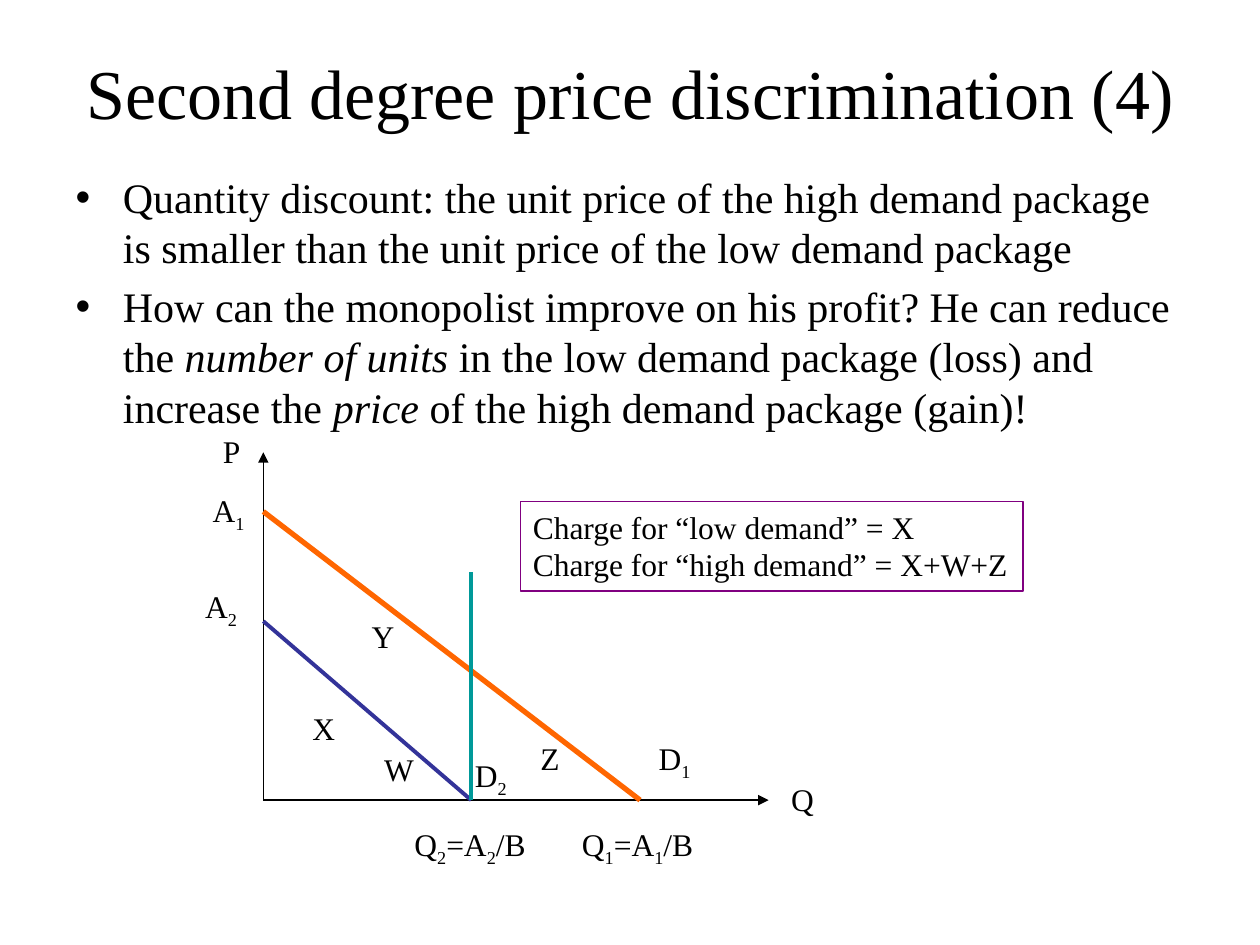
from dataclasses import dataclass

from lxml.etree import SubElement
from pptx import Presentation
from pptx.dml.color import RGBColor
from pptx.enum.shapes import MSO_CONNECTOR as Connector, MSO_SHAPE as Shape
from pptx.enum.text import MSO_ANCHOR as Anchor, MSO_AUTO_SIZE as AutoSize, PP_ALIGN as Align
from pptx.oxml.ns import qn
from pptx.util import Inches, Pt


@dataclass(frozen=True)
class Theme:
    font: str = "Times New Roman"
    title_size: int = 40
    body_size: int = 24
    label_size: int = 18
    text: str = "000000"
    high_demand: str = "FF6600"
    low_demand: str = "333399"
    quantity_limit: str = "009999"
    box_line: str = "800080"


@dataclass(frozen=True)
class Label:
    """Diagram text; an underscore lowers the character after it."""
    text: str
    column: float
    row: float
    width: float


@dataclass(frozen=True)
class Line:
    start: tuple[float, float]
    end: tuple[float, float]
    color: str
    weight: float
    arrow: bool = False


THEME = Theme()
COLUMNS, ROWS = 100, 75
SLIDE_WIDTH, SLIDE_HEIGHT = Inches(10), Inches(7.5)
LABEL_HEIGHT = 4

AXIS_X, AXIS_Y = 20.9, 63.5
LOW_QUANTITY, HIGH_QUANTITY = 37.4, 50.8
ORIGIN = (AXIS_X, AXIS_Y)

LINES = [
    Line(ORIGIN, (AXIS_X, 35.9), THEME.text, 0.75, arrow=True),
    Line(ORIGIN, (61, AXIS_Y), THEME.text, 0.75, arrow=True),
    Line((AXIS_X, 40.6), (HIGH_QUANTITY, AXIS_Y), THEME.high_demand, 3),
    Line((AXIS_X, 49.3), (LOW_QUANTITY, AXIS_Y), THEME.low_demand, 2.25),
    Line((LOW_QUANTITY, AXIS_Y), (LOW_QUANTITY, 45.4), THEME.quantity_limit, 2.25),
]

LABELS = [
    Label("P", 16.7, 33.8, 3.4),
    Label("Q", 61.8, 61.4, 3.8),
    Label("A_1", 15.9, 38.5, 4.7),
    Label("A_2", 15.3, 46.1, 4.7),
    Label("D_1", 51.3, 58.2, 4.7),
    Label("D_2", 36.7, 59.5, 4.7),
    Label("Q_1=A_1/B", 45.2, 65, 11.1),
    Label("Q_2=A_2/B", 31.9, 65, 11.1),
    Label("X", 23.8, 55.8, 3.8),
    Label("Y", 28.5, 48.5, 3.8),
    Label("Z", 41.9, 58.2, 3.5),
    Label("W", 29.5, 59, 4.4),
]

# Each bullet is a list of (text, italic) runs.
BULLETS = [
    [("Quantity discount: the unit price of the high demand package "
      "is smaller than the unit price of the low demand package", False)],
    [("How can the monopolist improve on his profit? He can reduce the ", False),
     ("number of units", True),
     (" in the low demand package (loss) and increase the ", False),
     ("price", True),
     (" of the high demand package (gain)!", False)],
]
CHARGES = "Charge for “low demand” = X\nCharge for “high demand” = X+W+Z"


def x(column: float) -> int:
    return round(SLIDE_WIDTH * column / COLUMNS)


def y(row: float) -> int:
    return round(SLIDE_HEIGHT * row / ROWS)


def area(column: float, row: float, width: float, height: float) -> tuple[int, int, int, int]:
    return x(column), y(row), x(width), y(height)


def format_runs(text_frame, size: int) -> None:
    for paragraph in text_frame.paragraphs:
        for run in paragraph.runs:
            run.font.name = THEME.font
            run.font.size = Pt(size)
            run.font.color.rgb = RGBColor.from_string(THEME.text)


def place(shape, column: float, row: float, width: float, height: float) -> None:
    shape.left, shape.top, shape.width, shape.height = area(column, row, width, height)


def fill_title(shape) -> None:
    place(shape, 5, 3, 90, 8.5)
    frame = shape.text_frame
    frame.text = "Second degree price discrimination (4)"
    frame.auto_size = AutoSize.NONE
    frame.vertical_anchor = Anchor.MIDDLE
    frame.paragraphs[0].alignment = Align.CENTER
    format_runs(frame, THEME.title_size)


def fill_body(shape) -> None:
    """Write the list; bullets and indents come from the template."""
    place(shape, 5, 13.1, 90, 56.7)
    frame = shape.text_frame
    frame.auto_size = AutoSize.NONE
    for index, bullet in enumerate(BULLETS):
        paragraph = frame.add_paragraph() if index else frame.paragraphs[0]
        paragraph.space_before = Pt(THEME.body_size * 0.2)
        for text, italic in bullet:
            run = paragraph.add_run()
            run.text = text
            run.font.italic = italic
    format_runs(frame, THEME.body_size)


def draw_line(slide, line: Line) -> None:
    (start_column, start_row), (end_column, end_row) = line.start, line.end
    connector = slide.shapes.add_connector(
        Connector.STRAIGHT, x(start_column), y(start_row), x(end_column), y(end_row))
    connector.line.color.rgb = RGBColor.from_string(line.color)
    connector.line.width = Pt(line.weight)
    if line.arrow:
        SubElement(connector.line._get_or_add_ln(), qn("a:tailEnd"), type="triangle")
    SubElement(connector._element.spPr, qn("a:effectLst"))


def draw_label(slide, label: Label) -> None:
    box = slide.shapes.add_textbox(*area(label.column, label.row, label.width, LABEL_HEIGHT))
    frame = box.text_frame
    frame.word_wrap = False
    frame.auto_size = AutoSize.SHAPE_TO_FIT_TEXT
    paragraph = frame.paragraphs[0]
    first, *lowered = label.text.split("_")
    paragraph.add_run().text = first
    for part in lowered:
        subscript = paragraph.add_run()
        subscript.text = part[0]
        subscript.font._element.set("baseline", "-25000")
        if part[1:]:
            paragraph.add_run().text = part[1:]
    format_runs(frame, THEME.label_size)


def draw_charges(slide) -> None:
    box = slide.shapes.add_shape(Shape.RECTANGLE, *area(41.3, 39.8, 39.9, 7.1))
    box.shadow.inherit = False
    box.fill.background()
    box.line.color.rgb = RGBColor.from_string(THEME.box_line)
    box.line.width = Pt(0.75)
    frame = box.text_frame
    frame.text = CHARGES
    frame.word_wrap = False
    frame.auto_size = AutoSize.SHAPE_TO_FIT_TEXT
    frame.vertical_anchor = Anchor.TOP
    for paragraph in frame.paragraphs:
        paragraph.alignment = Align.LEFT
    format_runs(frame, THEME.label_size)


def main() -> None:
    presentation = Presentation()
    presentation.slide_width, presentation.slide_height = SLIDE_WIDTH, SLIDE_HEIGHT
    slide = presentation.slides.add_slide(presentation.slide_layouts[1])
    fill_title(slide.shapes.title)
    fill_body(slide.placeholders[1])
    for line in LINES:
        draw_line(slide, line)
    for label in LABELS:
        draw_label(slide, label)
    draw_charges(slide)
    presentation.save("out.pptx")


if __name__ == "__main__":
    main()
